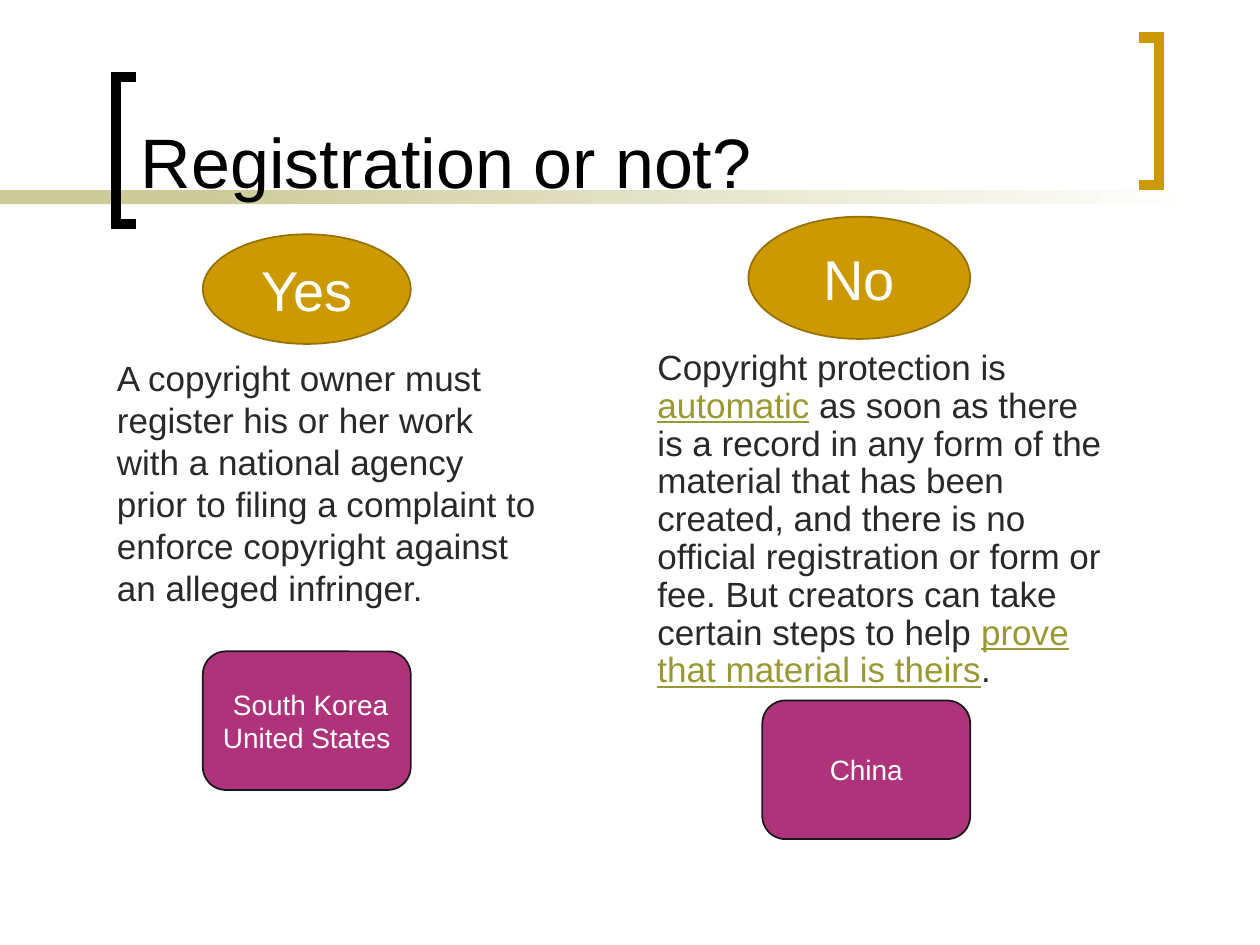
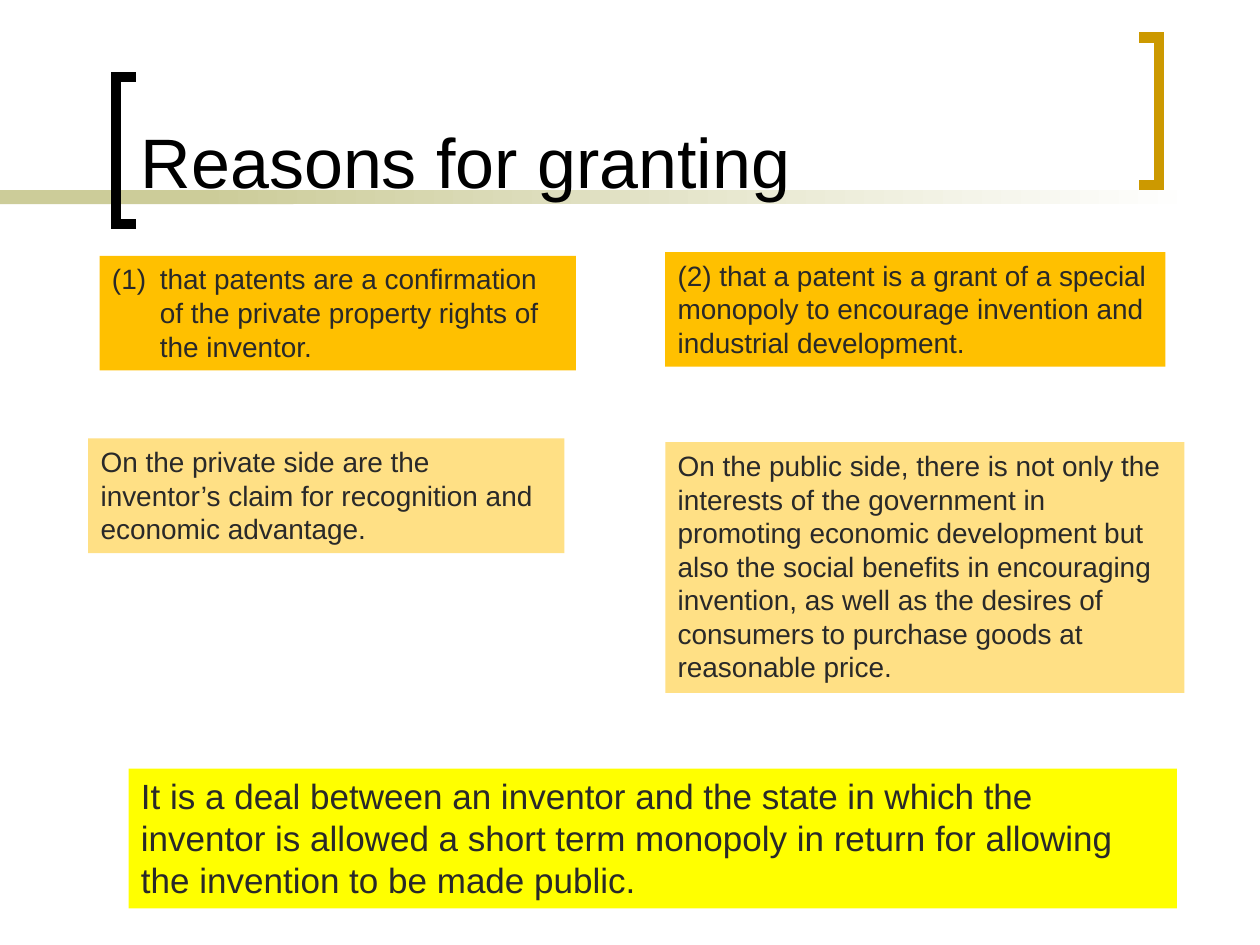
"""Builds two slides on copyright registration and on reasons for granting patents."""
from lxml import etree
from pptx import Presentation
from pptx.dml.color import RGBColor
from pptx.enum.shapes import MSO_SHAPE
from pptx.enum.text import MSO_ANCHOR, PP_ALIGN
from pptx.oxml.ns import qn
from pptx.util import Pt

PX = 9144
FONT = "Arial"
BLACK, WHITE, INK = "000000", "FFFFFF", "292929"
GOLD, GOLD_EDGE, SAND, OLIVE = "CC9900", "977100", "CCCC99", "999933"
PLUM, PLUM_EDGE = "AF337A", "181818"
AMBER, CREAM, YELLOW = "FFC000", "FFE085", "FFFF00"
RECTANGLE, OVAL = MSO_SHAPE.RECTANGLE, MSO_SHAPE.OVAL
ROUNDED = MSO_SHAPE.FLOWCHART_ALTERNATE_PROCESS
TOP, MIDDLE, BOTTOM = MSO_ANCHOR.TOP, MSO_ANCHOR.MIDDLE, MSO_ANCHOR.BOTTOM
LEFT, CENTER = PP_ALIGN.LEFT, PP_ALIGN.CENTER


def color(code):
    """Turn a hex string into a colour."""
    return RGBColor.from_string(code)


def assign(target, values):
    """Set attributes from a dict of format values."""
    for name, value in values.items():
        setattr(target, name, value)


class SlideBuilder:
    """Holds the deck style and the current slide."""

    def __init__(self, deck):
        """Set the slide size."""
        self.deck = deck
        self.slide = None
        assign(deck, {"slide_width": 1000 * PX, "slide_height": 750 * PX})

    def page(self, title):
        """Start a slide with the shared band, brackets and title."""
        self.slide = self.deck.slides.add_slide(self.deck.slide_layouts[6])
        self.shape(RECTANGLE, (0, 151, 233, 11), SAND)
        self.fade((158, 151, 792, 11), SAND, WHITE)
        self.bracket(108, 92, 61, BLACK)
        self.bracket(904, 920, 30, GOLD)
        self.text((102, 11, 783, 155), title, 40, BLACK, anchor=BOTTOM)

    def shape(self, kind, place, fill, edge=None):
        """Add a preset shape with a plain fill and an optional edge."""
        shape = self.slide.shapes.add_shape(kind, *(value * PX for value in place))
        shape.shadow.inherit = False
        shape.fill.solid()
        shape.fill.fore_color.rgb = color(fill)
        if edge:
            shape.line.color.rgb = color(edge)
            shape.line.width = Pt(1)
        else:
            shape.line.fill.background()
        return shape

    def fade(self, place, start, end):
        """Add a bar that fades from left to right."""
        fill = self.shape(RECTANGLE, place, start).fill
        fill.gradient()
        fill.gradient_angle = 0
        for stop, position, code in zip(fill.gradient_stops, (0, 1), (start, end)):
            stop.position = position
            stop.color.rgb = color(code)

    def bracket(self, tip, spine, top, code):
        """Add a square bracket as an open outline."""
        bottom = top + 117
        outline = self.slide.shapes.build_freeform(tip, bottom, scale=PX)
        outline.add_line_segments([(spine, bottom), (spine, top), (tip, top)], close=False)
        shape = outline.convert_to_shape()
        shape.shadow.inherit = False
        shape.fill.background()
        shape.line.color.rgb = color(code)
        shape.line.width = Pt(6)
        etree.SubElement(shape.line._ln, qn("a:miter"), lim="800000")

    def paragraph(self, box, content, size, code, anchor=TOP, align=LEFT, **spacing):
        """Fill a box with one paragraph of plain or (text, link colour) spans."""
        assign(box.text_frame, {"word_wrap": True, "vertical_anchor": anchor})
        para = box.text_frame.paragraphs[0]
        assign(para, {"alignment": align, **spacing})
        for part in [content] if isinstance(content, str) else content:
            words, link = (part, None) if isinstance(part, str) else part
            span = para.add_run()
            span.text = words
            assign(span.font, {"name": FONT, "size": Pt(size), "underline": bool(link)})
            span.font.color.rgb = color(link or code)
        return para

    def text(self, place, content, size, code=INK, **layout):
        """Add a text box."""
        box = self.slide.shapes.add_textbox(*(value * PX for value in place))
        return self.paragraph(box, content, size, code, **layout)

    def label(self, kind, place, words, size, fill, edge):
        """Add an edged shape with centred white text."""
        shape = self.shape(kind, place, fill, edge)
        self.paragraph(shape, words, size, WHITE, anchor=MIDDLE, align=CENTER)

    def panel(self, place, words, fill, size=16, **layout):
        """Add a filled rectangle with text from the top left."""
        return self.paragraph(self.shape(RECTANGLE, place, fill), words, size, INK, **layout)

    def number(self, para, indent):
        """Give a paragraph a hanging number in brackets."""
        properties = para._p.get_or_add_pPr()
        properties.set("marL", str(indent * PX))
        properties.set("indent", str(-indent * PX))
        etree.SubElement(properties, qn("a:buFont"), typeface=FONT)
        etree.SubElement(properties, qn("a:buAutoNum"), type="arabicParenBoth")


def registration(builder):
    """Compare countries with and without registration."""
    builder.page("Registration or not?")
    builder.text((512, 273, 373, 305), [
        "Copyright protection is ", ("automatic", OLIVE),
        " as soon as there is a record in any form of the material that has been created, "
        "and there is no official registration or form or fee. "
        "But creators can take certain steps to help ",
        ("prove that material is theirs", OLIVE), "."],
        20, line_spacing=0.9, space_before=Pt(4))
    builder.text((83, 278, 354, 212),
                 "A copyright owner must register his or her work with a national agency "
                 "prior to filing a complaint to enforce copyright against an alleged infringer.", 20)
    for place, answer in (((161, 186, 165, 87), "Yes"), ((594, 172, 176, 97), "No")):
        builder.label(OVAL, place, answer, 32, GOLD, GOLD_EDGE)
    for left, top, countries in ((161, 517, " South Korea United States"), (605, 556, "China")):
        builder.label(ROUNDED, (left, top, 165, 110), countries, 16, PLUM, PLUM_EDGE)


def granting(builder):
    """Set out private and public reasons for granting patents."""
    builder.page("Reasons for granting")
    builder.panel((102, 610, 832, 111),
                  "It is a deal between an inventor and the state in which the inventor is allowed "
                  "a short term monopoly in return for allowing the invention to be made public.",
                  YELLOW, 20, space_before=Pt(4))
    first_reason = builder.panel(
        (79, 203, 378, 91),
        "that patents are a confirmation of the private property rights of the inventor.", AMBER)
    builder.number(first_reason, 38)
    builder.panel((528, 200, 397, 91),
                  "(2) that a patent is a grant of a special monopoly to encourage "
                  "invention and industrial development.", AMBER)
    builder.panel((70, 348, 378, 91),
                  "On the private side are the inventor’s claim for recognition "
                  "and economic advantage.", CREAM)
    builder.panel((528, 351, 412, 199),
                  "On the public side, there is not only the interests of the government in "
                  "promoting economic development but also the social benefits in encouraging "
                  "invention, as well as the desires of consumers to purchase goods at "
                  "reasonable price.", CREAM)


def main():
    """Build and save the deck."""
    deck = Presentation()
    builder = SlideBuilder(deck)
    registration(builder)
    granting(builder)
    deck.save("out.pptx")


if __name__ == "__main__":
    main()
